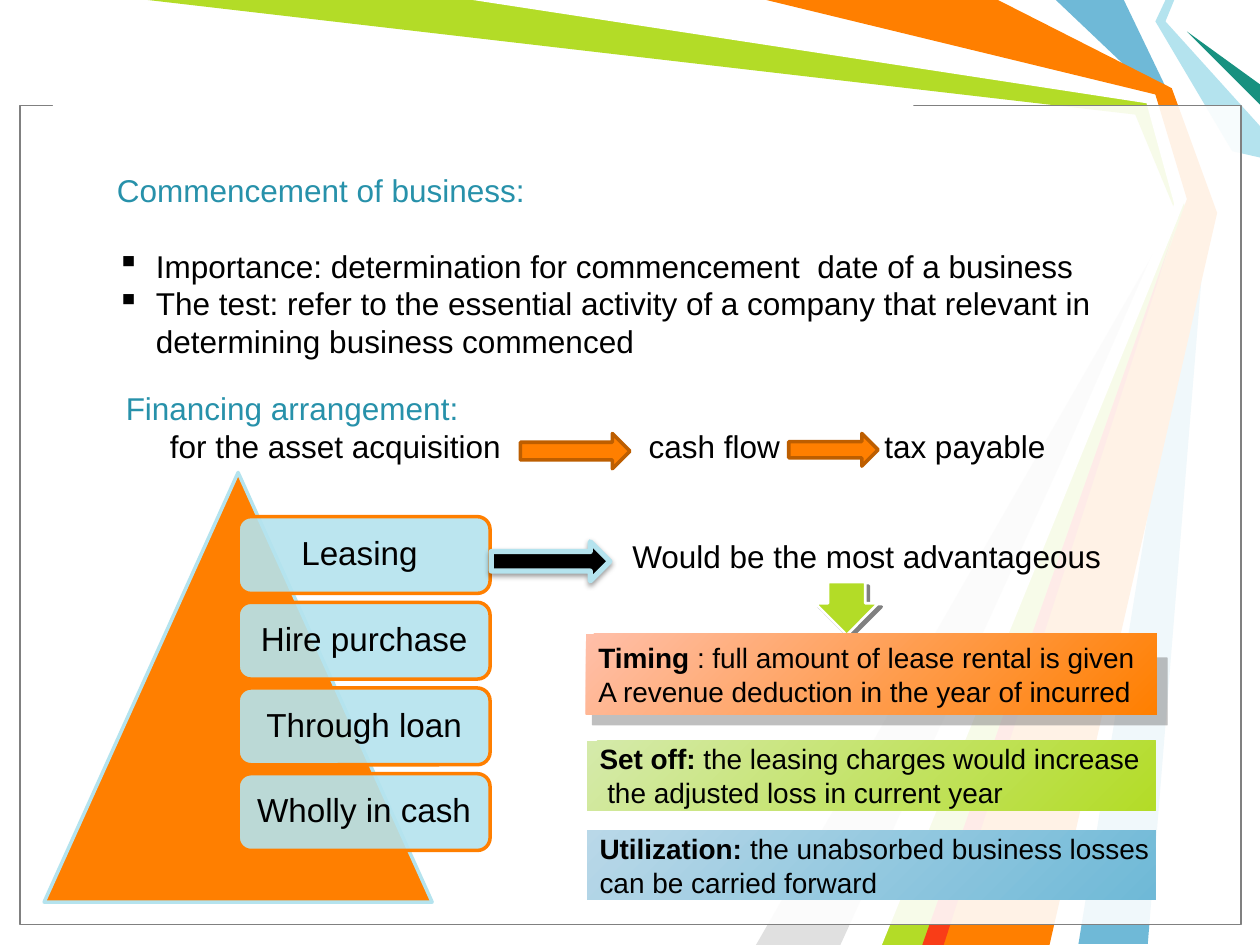
from lxml.etree import SubElement
from pptx import Presentation
from pptx.dml.color import RGBColor as RGB
from pptx.enum.shapes import MSO_SHAPE as Kind
from pptx.enum.text import MSO_ANCHOR as Anchor, PP_ALIGN as Align
from pptx.oxml.ns import qn
from pptx.util import Inches, Pt

WHITE, BLACK = RGB(255, 255, 255), RGB(0, 0, 0)
GRAY, SILVER = RGB(0x80, 0x80, 0x80), RGB(0xE0, 0xE0, 0xE0)
ORANGE, BROWN, PEACH = RGB(0xFF, 0x7F, 0), RGB(0xBD, 0x5E, 0), RGB(0xFF, 0xBF, 0xA9)
LIME, PALE_LIME = RGB(0xB3, 0xDC, 0x27), RGB(0xD5, 0xEA, 0xAB)
BLUE, PALE_BLUE = RGB(0x6F, 0xB9, 0xD7), RGB(0xB9, 0xD8, 0xE8)
ICE, TEAL, GREEN = RGB(0xB4, 0xE3, 0xEE), RGB(0x27, 0x91, 0xAA), RGB(0x18, 0x91, 0x80)
RED = RGB(0xF9, 0x3D, 0x17)

RAYS = [
    (BLUE, [(8.92, 0), (9.29, 0.77), (9.58, 1.67), (9.11, 7.49), (8.56, 7.49),
            (9.5, 1.67), (9.17, 0.75), (8.38, 0)]),
    (LIME, [(1.17, 0), (3.83, 0), (9.14, 0.78), (9.42, 1.69), (7.42, 7.5),
            (6.92, 7.5), (9.35, 1.73), (9.01, 0.91)]),
    (SILVER, [(6.67, 7.5), (9.27, 1.81), (6, 7.5)]),
    (WHITE, [(3.75, 0), (9.1, 0.82), (9.32, 1.62), (6.75, 7.5), (7, 7.5),
             (9.41, 1.58), (9.17, 0.75), (6, 0)]),
    (ICE, [(9.25, 0), (9.17, 0.17), (9.78, 1.2), (10, 1.25), (10, 1),
           (9.25, 0.17), (9.32, 0)]),
    (GREEN, [(10, 0.83), (9.42, 0.25), (10, 0.67)]),
    (ORANGE, [(6.08, 0), (7.92, 0), (9.3, 0.7), (9.66, 1.69), (8.33, 7.5),
              (7.33, 7.5), (9.42, 1.58), (9.17, 0.75)]),
    (RED, [(7.32, 7.5), (9.32, 1.83), (7.49, 7.5)]),
]

CARDS = [
    ((4.65, 5.03, 4.53, 0.64), PEACH, ORANGE, "Timing",
     " : full amount of lease rental is given",
     "A revenue deduction in the year of incurred"),
    ((4.66, 5.88, 4.51, 0.55), PALE_LIME, LIME, "Set off: ",
     "the leasing charges would increase",
     " the adjusted loss in current year"),
    ((4.66, 6.59, 4.51, 0.55), PALE_BLUE, BLUE, "Utilization: ",
     "the unabsorbed business losses",
     "can be carried forward"),
]

OPTIONS = ["Leasing ", "Hire purchase", "Through loan", "Wholly in cash"]


def set_alpha(node, value):
    SubElement(node, qn("a:alpha"), val=str(value * 1000))


def paint(shape, fill, edge=None, width=1, alpha=None):
    shape.shadow.inherit = False
    shape.fill.solid()
    shape.fill.fore_color.rgb = fill
    if alpha:
        set_alpha(shape.fill._xPr.find(".//" + qn("a:srgbClr")), alpha)
    if edge is None:
        shape.line.fill.background()
    else:
        shape.line.color.rgb = edge
        shape.line.width = Pt(width)


def cast(shape, color, alpha, blur, dist, angle):
    effects = shape._element.spPr.find(qn("a:effectLst"))
    shade = SubElement(effects, qn("a:outerShdw"), blurRad=str(Pt(blur)),
                       dist=str(Pt(dist)), dir=str(angle * 60000),
                       algn="ctr", rotWithShape="0")
    set_alpha(SubElement(shade, qn("a:srgbClr"), val=str(color)), alpha)


def add_ray(slide, color, points):
    spots = [(Inches(x), Inches(y)) for x, y in points]
    pen = slide.shapes.build_freeform(*spots[0], scale=1.0)
    pen.add_line_segments(spots[1:], close=True)
    paint(pen.convert_to_shape(), color)


def add_form(slide, kind, place, *look, **more):
    shape = slide.shapes.add_shape(kind, *map(Inches, place))
    paint(shape, *look, **more)
    return shape


def add_box(slide, place):
    frame = slide.shapes.add_textbox(*map(Inches, place)).text_frame
    frame.word_wrap = True
    return frame


def style(par, size, color):
    par.font.name = "Arial"
    par.font.size = Pt(size)
    par.font.color.rgb = color


def add_line(frame, text, size=18, color=BLACK):
    par = frame.paragraphs[0]
    if par.runs:
        par = frame.add_paragraph()
    par.add_run().text = text
    style(par, size, color)
    return par


def add_point(frame, text):
    par = frame.add_paragraph()
    par.text = text
    props = par._p.get_or_add_pPr()
    props.set("marL", str(Inches(0.31)))
    props.set("indent", str(Inches(-0.31)))
    SubElement(props, qn("a:buChar"), char="▪")
    style(par, 18, BLACK)
    return par


def add_tabs(frame, text, stops):
    par = frame.add_paragraph()
    par.text = text
    tabs = SubElement(par._p.get_or_add_pPr(), qn("a:tabLst"))
    for stop in stops:
        SubElement(tabs, qn("a:tab"), pos=str(Inches(stop)), algn="l")
    style(par, 18, BLACK)


def add_option(slide, row, text):
    place = (1.89, 4.1 + 0.68 * row, 2, 0.61)
    shape = add_form(slide, Kind.ROUNDED_RECTANGLE, place, ICE, ORANGE, 2, alpha=90)
    par = add_line(shape.text_frame, text, 19)
    par.alignment = Align.CENTER
    par.line_spacing = 0.9


def add_card(slide, place, start, end, head, rest, second):
    shape = add_form(slide, Kind.RECTANGLE, place, end)
    shape.fill.gradient()
    shape.fill.gradient_angle = 315
    for stop, color in zip(shape.fill.gradient_stops, (start, end)):
        stop.color.rgb = color
    frame = shape.text_frame
    frame.margin_right = 0
    frame.vertical_anchor = Anchor.MIDDLE
    first = add_line(frame, head, 16)
    first.runs[0].font.bold = True
    first.add_run().text = rest
    add_line(frame, second, 16)
    for par in frame.paragraphs:
        par.alignment = Align.LEFT


def main():
    deck = Presentation()
    deck.slide_width, deck.slide_height = Inches(10), Inches(7.5)
    slide = deck.slides.add_slide(deck.slide_layouts[6])

    for color, points in RAYS:
        add_ray(slide, color, points)
    add_form(slide, Kind.RECTANGLE, (0.16, 0.84, 9.69, 6.5), WHITE, GRAY, 0.75, alpha=90)
    add_form(slide, Kind.RECTANGLE, (0.42, 0.74, 6.83, 0.17), WHITE)

    start = add_box(slide, (0.83, 1.31, 8.74, 2.22))
    add_line(start, "Commencement of business:", color=TEAL)
    point = add_point(start, "Importance: determination for commencement  date of a business")
    point.space_before = Pt(21.5)
    add_point(start, "The test: refer to the essential activity of a company "
                     "that relevant in determining business commenced")

    money = add_box(slide, (0.9, 3.04, 8.27, 1.01))
    add_line(money, "Financing arrangement:", color=TEAL)
    add_tabs(money, "\tfor the asset acquisition\tcash flow\ttax payable", (0.35, 4.15, 6.02))
    for place in ((4.13, 3.44, 0.87, 0.28), (6.26, 3.44, 0.71, 0.26)):
        add_form(slide, Kind.RIGHT_ARROW, place, ORANGE, BROWN, 2)

    add_form(slide, Kind.ISOSCELES_TRIANGLE, (0.35, 3.75, 3.08, 3.41), ORANGE, ICE, 2)
    for row, text in enumerate(OPTIONS):
        add_option(slide, row, text)

    arrow = add_form(slide, Kind.RIGHT_ARROW, (3.9, 4.3, 0.94, 0.31), BLACK, ICE, 3)
    cast(arrow, BLACK, 38, 3.1, 1.6, 90)
    add_line(add_box(slide, (4.92, 4.21, 4.65, 0.41)), "Would be the most advantageous")
    down = add_form(slide, Kind.DOWN_ARROW, (6.47, 4.62, 0.5, 0.42), LIME, WHITE, 1.5)
    down.adjustments[0], down.adjustments[1] = 0.59, 0.6
    cast(down, GRAY, 100, 0, 2.8, 45)

    back = add_form(slide, Kind.RECTANGLE, (4.62, 5.14, 4.56, 0.53), WHITE, WHITE, 0.75)
    cast(back, GRAY, 50, 0, 8.5, 45)
    for card in CARDS:
        add_card(slide, *card)

    deck.save("out.pptx")


if __name__ == "__main__":
    main()
